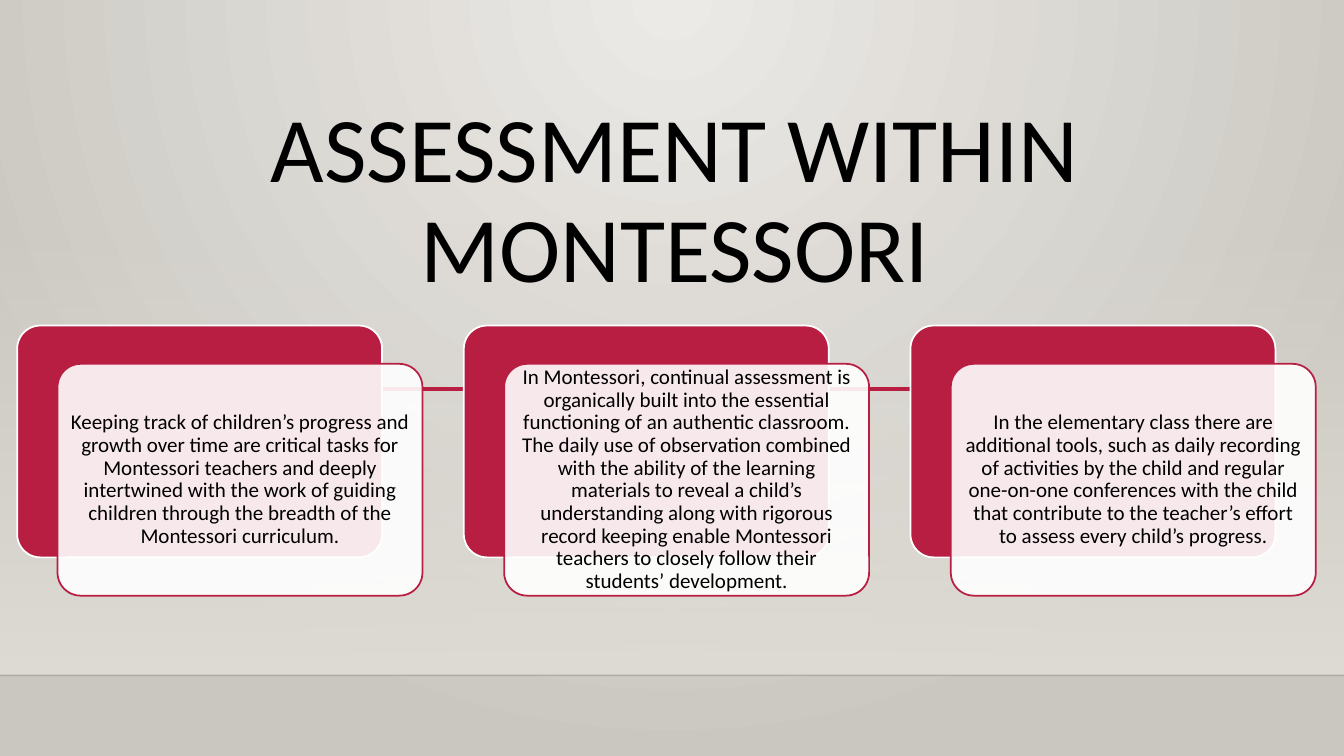
"""Build the slide on assessment within Montessori: a title above three linked cards."""
from lxml import etree
from pptx import Presentation
from pptx.dml.color import RGBColor
from pptx.enum.shapes import MSO_CONNECTOR, MSO_SHAPE
from pptx.enum.text import MSO_ANCHOR, PP_ALIGN
from pptx.oxml.ns import qn
from pptx.util import Inches, Pt

STRAIGHT = MSO_CONNECTOR.STRAIGHT
RECT, ROUND = MSO_SHAPE.RECTANGLE, MSO_SHAPE.ROUNDED_RECTANGLE
MIDDLE, BOTTOM = MSO_ANCHOR.MIDDLE, MSO_ANCHOR.BOTTOM
CENTER = PP_ALIGN.CENTER

COLORS = {name: RGBColor.from_string(code) for name, code in {
    "glow": "ECEAE7", "edge": "CAC7C1", "wall": "DFDBD5", "floor": "000001",
    "red": "B71E42", "white": "FFFFFF", "black": "000000"}.items()}

CARDS = [
    "Keeping track of children’s progress and growth over time are critical tasks "
    "for Montessori teachers and deeply intertwined with the work of guiding "
    "children through the breadth of the Montessori curriculum.",
    "In Montessori, continual assessment is organically built into the essential "
    "functioning of an authentic classroom. The daily use of observation combined "
    "with the ability of the learning materials to reveal a child’s understanding "
    "along with rigorous record keeping enable Montessori teachers to closely "
    "follow their students’ development.",
    "In the elementary class there are additional tools, such as daily recording "
    "of activities by the child and regular one-on-one conferences with the child "
    "that contribute to the teacher’s effort to assess every child’s progress.",
]


def fade(node, percent):
    """Set the opacity of the first colour inside a node."""
    color = next(node.iter(qn("a:srgbClr")))
    etree.SubElement(color, qn("a:alpha")).set("val", str(percent * 1000))


def write(shape, text, size, anchor, margins):
    """Put one centred paragraph into a shape."""
    frame = shape.text_frame
    frame.text = text
    frame.word_wrap = True
    frame.vertical_anchor = anchor
    (frame.margin_left, frame.margin_top,
     frame.margin_right, frame.margin_bottom) = [Inches(m) for m in margins]
    para = frame.paragraphs[0]
    para.alignment = CENTER
    para.line_spacing = 0.9
    font = para.runs[0].font
    font.name, font.size = "Calibri", Pt(size)
    font.color.rgb = COLORS["black"]


prs = Presentation()
prs.slide_width, prs.slide_height = Inches(13.33), Inches(7.5)
slide = prs.slides.add_slide(prs.slide_layouts[6])
shapes = slide.shapes

back = slide.background.fill
back.gradient()
for stop, name in zip(back.gradient_stops, ("glow", "edge")):
    stop.color.rgb = COLORS[name]
grad = next(slide.element.iter(qn("a:gradFill")))
grad.remove(grad.find(qn("a:lin")))
radial = etree.SubElement(grad, qn("a:path"), {"path": "circle"})
etree.SubElement(radial, qn("a:fillToRect"),
                 {"l": "43000", "t": "0", "r": "43000", "b": "100000"})

wall = shapes.add_shape(RECT, 0, Inches(2.21), Inches(13.33), Inches(4.49))
wall.shadow.inherit = False
wall.line.fill.background()
wall.fill.gradient()
wall.fill.gradient_angle = 270
for stop in wall.fill.gradient_stops:
    stop.color.rgb = COLORS["wall"]
fade(wall.element.spPr, 0)

for start, end, y, name, width in [(0, 13.33, 6.7, "floor", 1),
                                   (2.64, 12.09, 3.86, "red", 2.5)]:
    line = shapes.add_connector(STRAIGHT, Inches(start), Inches(y), Inches(end), Inches(y))
    line.line.color.rgb = COLORS[name]
    line.line.width = Pt(width)
    etree.SubElement(line.element.spPr, qn("a:effectLst"))
    if name == "floor":
        fade(line.element.spPr, 20)

title = shapes.add_textbox(Inches(1.97), Inches(0.73), Inches(9.45), Inches(2.27))
write(title, "ASSESSMENT WITHIN MONTESSORI", 66, BOTTOM, (0.1, 0.05, 0.1, 0))

for i, text in enumerate(CARDS):
    left = 0.17 + 4.43 * i
    for x, y, fill, edge in [(left, 3.23, "red", "white"),
                             (left + 0.4, 3.61, "white", "red")]:
        card = shapes.add_shape(ROUND, Inches(x), Inches(y), Inches(3.62), Inches(2.3))
        card.adjustments[0] = 0.1
        card.shadow.inherit = False
        card.fill.solid()
        card.fill.fore_color.rgb = COLORS[fill]
        card.line.color.rgb = COLORS[edge]
        card.line.width = Pt(1.25)
    fade(card.element.spPr, 90)
    write(card, text, 15, MIDDLE, [0.06] * 4)

prs.save("out.pptx")
